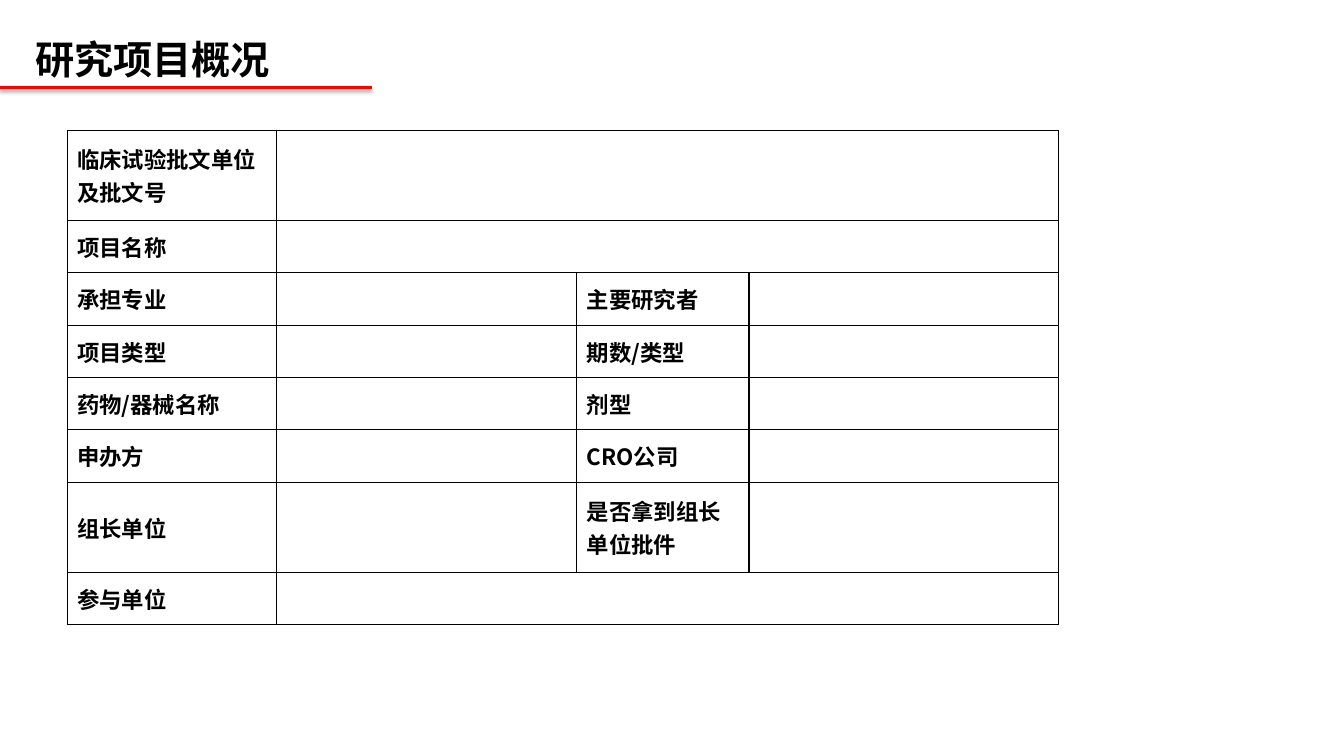
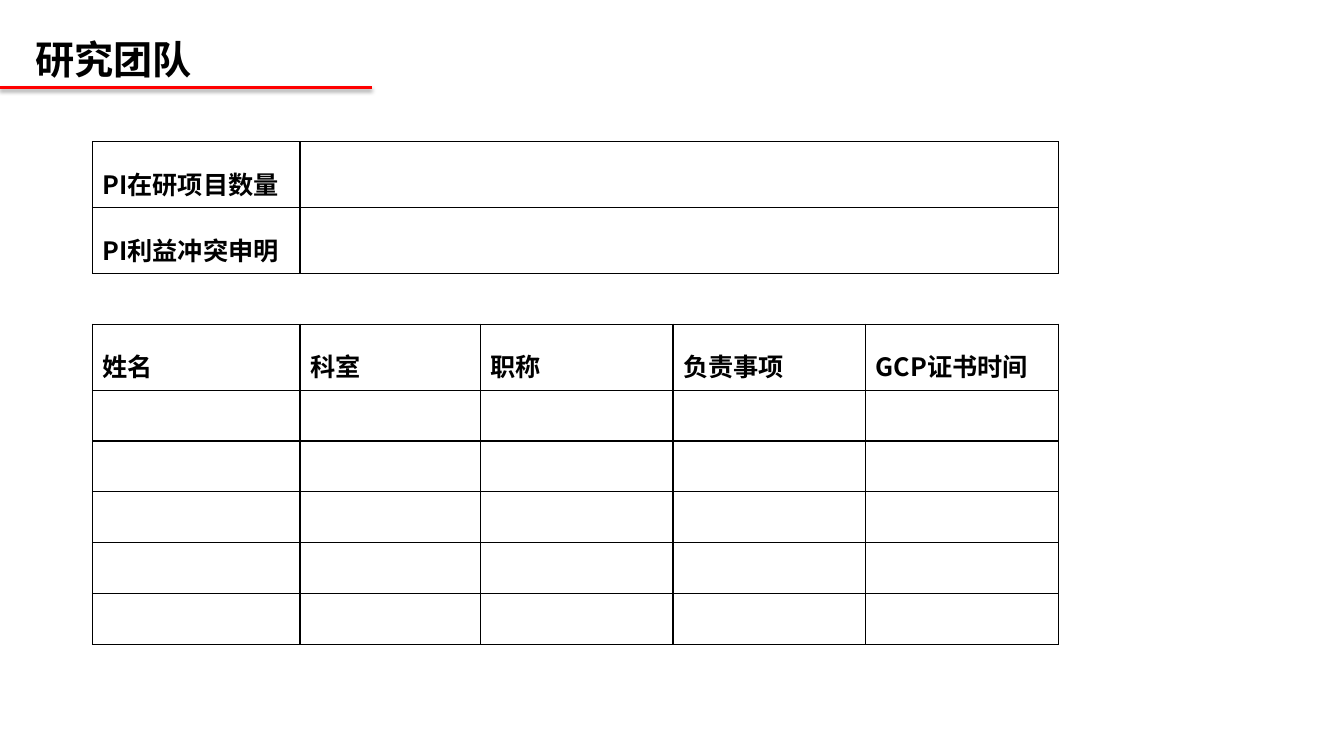
from lxml.etree import SubElement
from pptx import Presentation
from pptx.dml.color import RGBColor
from pptx.enum.shapes import MSO_CONNECTOR
from pptx.enum.text import MSO_ANCHOR
from pptx.oxml import parse_xml
from pptx.oxml.ns import nsdecls, qn
from pptx.util import Pt

BLACK = "000000"
RED = "FF0000"
CJK_FONT = "Noto Sans CJK SC"
TITLE_FONT = "Times New Roman"

OVERVIEW_COLUMNS = [149.8, 214.2, 123, 221]
TALL_ROW, SHORT_ROW = 64.5, 37.4
OVERVIEW_ROWS = [
    (TALL_ROW, ["临床试验批文单位及批文号"]),
    (SHORT_ROW, ["项目名称"]),
    (SHORT_ROW, ["承担专业", "", "主要研究者", ""]),
    (SHORT_ROW, ["项目类型", "", "期数/类型", ""]),
    (SHORT_ROW, ["药物/器械名称", "", "剂型", ""]),
    (SHORT_ROW, ["申办方", "", "CRO公司", ""]),
    (TALL_ROW, ["组长单位", "", "是否拿到组长单位批件", ""]),
    (SHORT_ROW, ["参与单位"]),
]

TEAM_COLUMNS = [148.3, 128.9, 137.6, 137.6, 137.6]
LABEL_ROW, EMPTY_ROW = 47.1, 36.3
MEMBER_COUNT = 5
TEAM_ROWS = [
    (LABEL_ROW, ["PI在研项目数量"]),
    (LABEL_ROW, ["PI利益冲突申明"]),
    (EMPTY_ROW, []),
    (LABEL_ROW, ["姓名", "科室", "职称", "负责事项", "GCP证书时间"]),
] + [(EMPTY_ROW, [""] * len(TEAM_COLUMNS))] * MEMBER_COUNT


def color(value):
    return RGBColor.from_string(value)


def write(paragraph, text, size, font_name, spacing=None):
    paragraph.text = text
    paragraph.line_spacing = spacing
    font = paragraph.font
    font.name = font_name
    font.size = Pt(size)
    font.bold = True
    font.color.rgb = color(BLACK)
    defaults = paragraph._p.pPr.find(qn("a:defRPr"))
    SubElement(defaults, qn("a:ea"), typeface=CJK_FONT)


def add_title(slide, text):
    title = slide.shapes.add_textbox(Pt(18), Pt(24), Pt(855), Pt(38.6))
    frame = title.text_frame
    frame.word_wrap = True
    frame.vertical_anchor = MSO_ANCHOR.BOTTOM
    write(frame.paragraphs[0], text, 28, TITLE_FONT, 0.9)


def add_title_rule(slide):
    rule = slide.shapes.add_connector(
        MSO_CONNECTOR.STRAIGHT, Pt(0), Pt(62.6), Pt(265.6), Pt(62.6))
    rule.line.color.rgb = color(RED)
    rule.line.width = Pt(2)
    rule._element.spPr.append(parse_xml(
        f'<a:effectLst {nsdecls("a")}>'
        f'<a:outerShdw blurRad="{Pt(3.1)}" dist="{Pt(1.6)}" dir="5400000" rotWithShape="0">'
        f'<a:srgbClr val="{BLACK}"><a:alpha val="38000"/></a:srgbClr>'
        '</a:outerShdw></a:effectLst>'))


def set_borders(cell, visible_sides):
    properties = cell._tc.get_or_add_tcPr()
    for side in "LRTB":
        border = SubElement(properties, qn(f"a:ln{side}"), w=str(Pt(1)))
        if side in visible_sides:
            fill = SubElement(border, qn("a:solidFill"))
            SubElement(fill, qn("a:srgbClr"), val=BLACK)
        else:
            SubElement(border, qn("a:noFill"))


def add_form(slide, left, top, columns, rows, size, anchor, spacing=None):
    height = sum(row_height for row_height, _ in rows)
    form = slide.shapes.add_table(
        len(rows), len(columns), Pt(left), Pt(top), Pt(sum(columns)), Pt(height)).table
    form.first_row = False
    form.horz_banding = False
    for column, width in zip(form.columns, columns):
        column.width = Pt(width)
    last = len(columns) - 1
    for index, (row_height, labels) in enumerate(rows):
        form.rows[index].height = Pt(row_height)
        for cell in form.rows[index].cells:
            set_borders(cell, "LRTB" if labels else "TB")
            cell.fill.background()
            cell.vertical_anchor = anchor
        for position, label in enumerate(labels):
            if label:
                paragraph = form.cell(index, position).text_frame.paragraphs[0]
                write(paragraph, label, size, CJK_FONT, spacing)
        if len(labels) < len(columns):
            form.cell(index, len(labels)).merge(form.cell(index, last))


def add_titled_slide(deck, title):
    slide = deck.slides.add_slide(deck.slide_layouts[6])
    add_title(slide, title)
    add_title_rule(slide)
    return slide


def main():
    deck = Presentation()
    deck.slide_width = Pt(960)
    deck.slide_height = Pt(540)
    overview = add_titled_slide(deck, "研究项目概况")
    add_form(overview, 48, 93, OVERVIEW_COLUMNS, OVERVIEW_ROWS, 16, MSO_ANCHOR.MIDDLE)
    team = add_titled_slide(deck, "研究团队")
    add_form(team, 66, 101.2, TEAM_COLUMNS, TEAM_ROWS, 18, MSO_ANCHOR.TOP, 1.5)
    deck.save("out.pptx")


if __name__ == "__main__":
    main()
